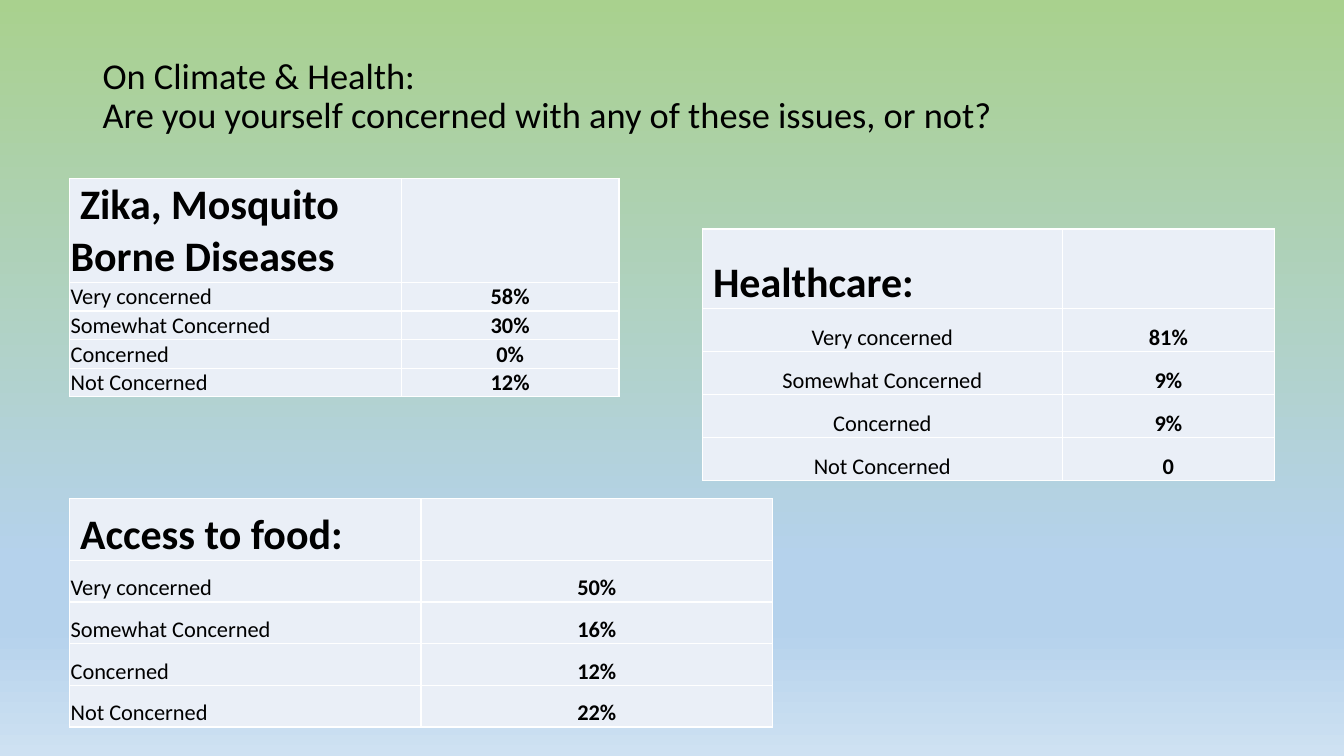
from dataclasses import dataclass

from lxml.etree import SubElement
from pptx import Presentation
from pptx.dml.color import RGBColor
from pptx.enum.text import MSO_ANCHOR, MSO_AUTO_SIZE, PP_ALIGN
from pptx.oxml.ns import qn
from pptx.util import Cm, Pt


@dataclass(frozen=True)
class Theme:
    font: str = "Calibri"
    ink: str = "000000"
    cell: str = "EAEFF7"
    border: str = "FFFFFF"
    sky: tuple = ((0, "A9D18E"), (74, "B5D2EC"), (83, "B5D2EC"), (100, "CEE1F2"))
    title_size: int = 26
    heading_size: int = 30
    answer_size: int = 16


def write(frame, text, *, theme, size, bold=False, align=PP_ALIGN.LEFT, spacing=None):
    paragraph = frame.paragraphs[0]
    paragraph.text = text
    paragraph.alignment = align
    paragraph.line_spacing = spacing
    for run in paragraph.runs:
        run.font.name = theme.font
        run.font.size = Pt(size)
        run.font.bold = bold
        run.font.color.rgb = RGBColor.from_string(theme.ink)


class SurveySlide:
    """Draws survey results on one slide in a shared theme."""

    def __init__(self, presentation, theme):
        self.theme = theme
        self.slide = presentation.slides.add_slide(presentation.slide_layouts[5])

    def background(self):
        fill = self.slide.background.fill
        fill.gradient()
        fill.gradient_angle = 270
        stops = self.slide.element.find(".//" + qn("a:gsLst"))
        stops.clear()
        for percent, color in self.theme.sky:
            stop = SubElement(stops, qn("a:gs"), pos=str(percent * 1000))
            SubElement(stop, qn("a:srgbClr"), val=color)

    def title(self, text, left, top, width, height):
        title = self.slide.shapes.title
        title.left, title.top = Cm(left), Cm(top)
        title.width, title.height = Cm(width), Cm(height)
        frame = title.text_frame
        frame.auto_size = MSO_AUTO_SIZE.NONE
        frame.vertical_anchor = MSO_ANCHOR.MIDDLE
        write(frame, text, theme=self.theme, size=self.theme.title_size, spacing=0.9)

    def style_cell(self, cell):
        cell.margin_left = cell.margin_right = cell.margin_top = Cm(0.03)
        cell.margin_bottom = 0
        cell.vertical_anchor = MSO_ANCHOR.BOTTOM
        properties = cell._tc.get_or_add_tcPr()
        for side in ("lnL", "lnR", "lnT", "lnB"):
            line = SubElement(properties, qn(f"a:{side}"), w=str(Pt(1)))
            paint = SubElement(line, qn("a:solidFill"))
            SubElement(paint, qn("a:srgbClr"), val=self.theme.border)
        cell.fill.solid()
        cell.fill.fore_color.rgb = RGBColor.from_string(self.theme.cell)

    def results(self, heading, shares, left, top, widths, heading_height,
                answer_height, answer_align=PP_ALIGN.LEFT):
        answers = ("Very concerned", "Somewhat Concerned", "Concerned", "Not Concerned")
        heights = [heading_height] + [answer_height] * len(answers)
        table = self.slide.shapes.add_table(
            len(heights), len(widths), Cm(left), Cm(top),
            Cm(sum(widths)), Cm(sum(heights))).table
        table.first_row = table.horz_banding = False
        for column, width in zip(table.columns, widths):
            column.width = Cm(width)
        for row, height in zip(table.rows, heights):
            row.height = Cm(height)
        for cell in table.iter_cells():
            self.style_cell(cell)
        write(table.cell(0, 0).text_frame, heading, theme=self.theme,
              size=self.theme.heading_size, bold=True)
        for row, (answer, share) in enumerate(zip(answers, shares), start=1):
            write(table.cell(row, 0).text_frame, answer, theme=self.theme,
                  size=self.theme.answer_size, align=answer_align)
            write(table.cell(row, 1).text_frame, share, theme=self.theme,
                  size=self.theme.answer_size, bold=True, align=PP_ALIGN.CENTER)


def main():
    presentation = Presentation()
    presentation.slide_width, presentation.slide_height = Cm(33.87), Cm(19.05)
    survey = SurveySlide(presentation, Theme())
    survey.background()
    survey.title("On Climate & Health:\vAre you yourself concerned with any of "
                 "these issues, or not?", 2.33, 1.01, 29.21, 2.87)
    left_edge = 1.75
    survey.results(" Access to food:", ("50%", "16%", "12%", "22%"),
                   left_edge, 12.57, (8.86, 8.86), 1.55, 1.05)
    survey.results(" Zika, Mosquito Borne Diseases", ("58%", "30%", "0%", "12%"),
                   left_edge, 4.5, (8.36, 5.49), 2.6, 0.71)
    survey.results(" Healthcare:", ("81%", "9%", "9%", "0"),
                   17.7, 5.77, (9.07, 5.35), 2.01, 1.08, PP_ALIGN.CENTER)
    presentation.save("out.pptx")


if __name__ == "__main__":
    main()
